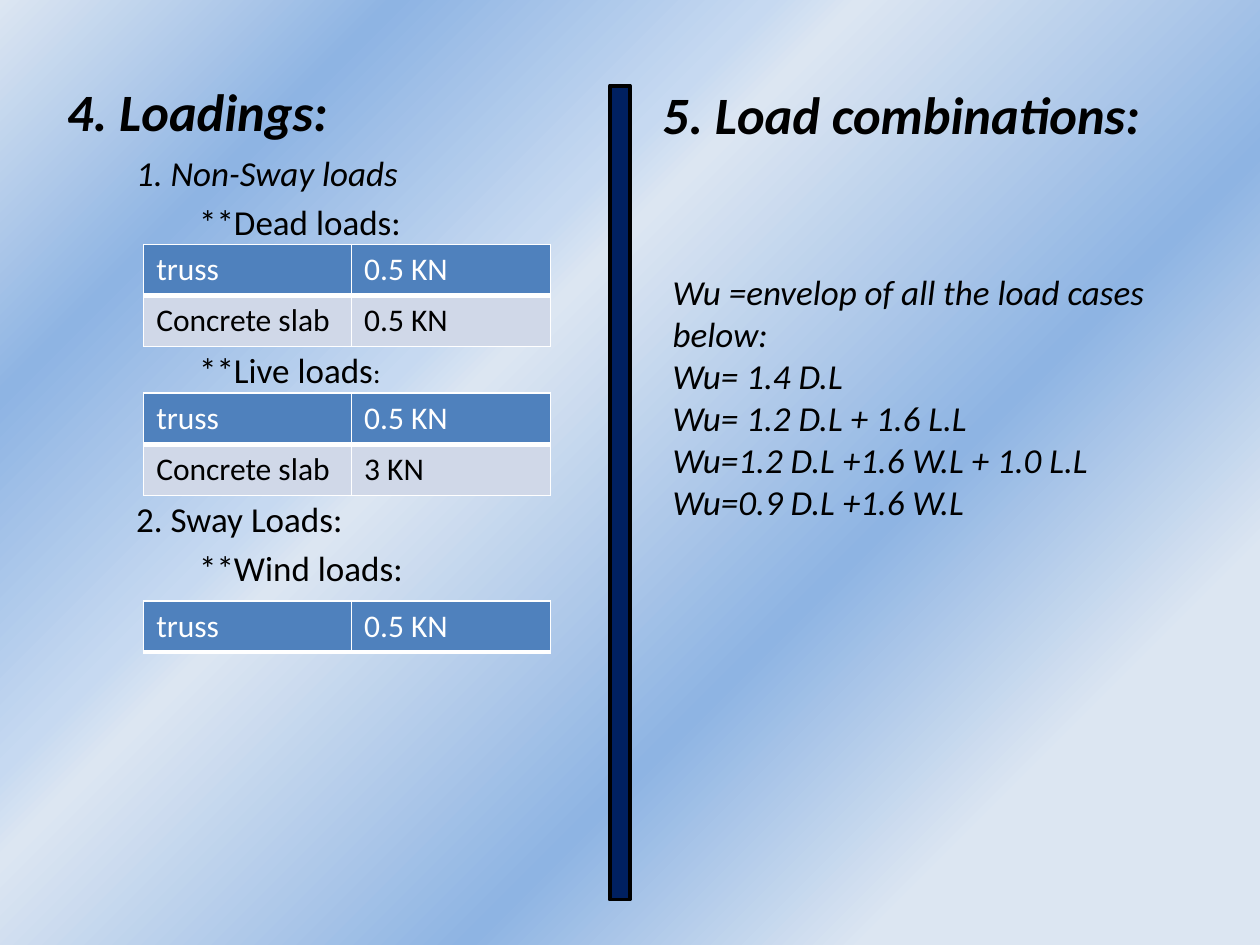
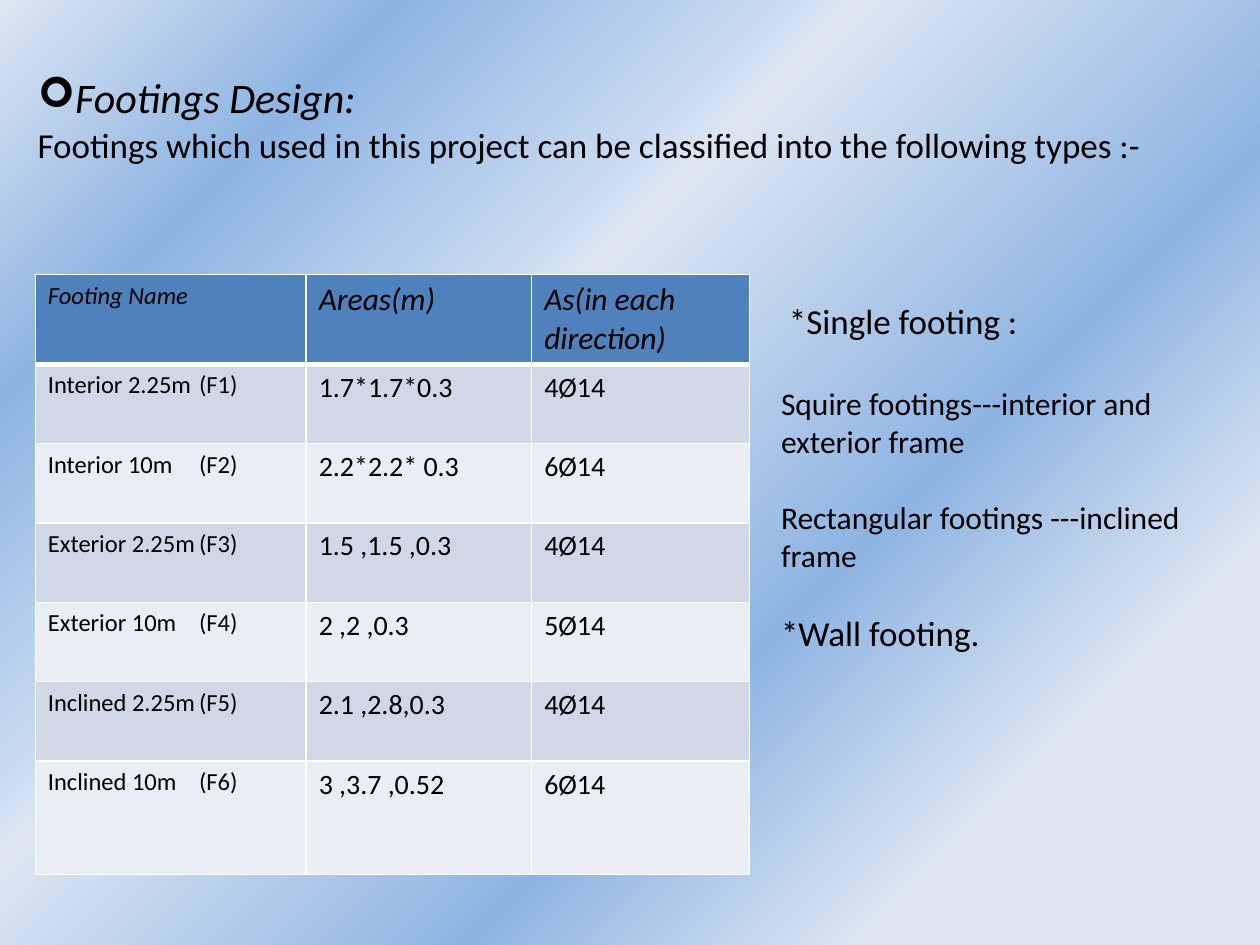
from lxml import etree
from pptx import Presentation
from pptx import util as u
from pptx.dml import color
from pptx.enum import shapes, text
from pptx.oxml import ns

FONT = "Calibri"
COLORS = {
    "black": "000000",
    "white": "FFFFFF",
    "navy": "002060",
    "header": "4F81BD",
    "band_dark": "D0D8E8",
    "band_light": "E9EDF4",
    "sky_pale": "DCE6F2",
    "sky_mid": "C6D9F1",
    "sky_deep": "8EB4E3",
}
BACKGROUND_STOPS = [
    (0, "sky_pale"), (18, "sky_deep"), (35, "sky_mid"),
    (39, "sky_pale"), (64, "sky_deep"), (82, "sky_pale"),
]


def rgb(name):
    return color.RGBColor.from_string(COLORS[name])


def add_xml(parent, tag, **attributes):
    return etree.SubElement(parent, ns.qn(tag), attributes)


def add_color(parent, name):
    add_xml(parent, "a:srgbClr", val=COLORS[name])


def set_background(master):
    master.background.fill.solid()
    solid = master.element.find(".//" + ns.qn("p:bgPr")).find(ns.qn("a:solidFill"))
    gradient = etree.Element(ns.qn("a:gradFill"), rotWithShape="1")
    stops = add_xml(gradient, "a:gsLst")
    for percent, name in BACKGROUND_STOPS:
        add_color(add_xml(stops, "a:gs", pos=str(percent * 1000)), name)
    add_xml(gradient, "a:lin", ang=str(45 * 60000), scaled="0")
    solid.getparent().replace(solid, gradient)


def place(shape, box):
    shape.left, shape.top, shape.width, shape.height = map(u.Inches, box)


def add_run(paragraph, words, size, name="black", bold=False, italic=False):
    run = paragraph.add_run()
    run.text = words
    font = run.font
    font.name, font.size, font.bold, font.italic = FONT, u.Pt(size), bold, italic
    font.color.rgb = rgb(name)


def next_paragraph(frame, first, before=0, level=0):
    paragraph = frame.paragraphs[0] if first else frame.add_paragraph()
    paragraph.alignment = text.PP_ALIGN.LEFT
    paragraph.space_before = u.Pt(before)
    paragraph.level = level
    return paragraph


def prepare_frame(shape, anchor=text.MSO_ANCHOR.TOP):
    frame = shape.text_frame
    frame.word_wrap = True
    frame.auto_size = text.MSO_AUTO_SIZE.NONE
    frame.vertical_anchor = anchor
    return frame


def fill_title(slide, box, words, size, anchor, bold=False):
    title = slide.shapes.title
    place(title, box)
    paragraph = next_paragraph(prepare_frame(title, anchor), True)
    add_run(paragraph, words, size, bold=bold, italic=True)
    return paragraph


def add_text(slide, box, lines, **style):
    frame = prepare_frame(slide.shapes.add_textbox(*map(u.Inches, box)))
    for index, (words, size, before) in enumerate(lines):
        add_run(next_paragraph(frame, index == 0, before), words, size, **style)


def set_borders(cell, row):
    properties = cell._tc.get_or_add_tcPr()
    widths = {"L": 1, "R": 1, "T": 3 if row == 1 else 1, "B": 3 if row == 0 else 1}
    for side, points in widths.items():
        line = add_xml(properties, "a:ln" + side, w=str(u.Pt(points)))
        add_color(add_xml(line, "a:solidFill"), "white")


def add_table(slide, left, top, columns, heights, rows, header_style, header_sizes, body_sizes):
    table = slide.shapes.add_table(
        len(rows), len(columns), u.Inches(left), u.Inches(top),
        u.Inches(sum(columns)), u.Inches(sum(heights))).table
    for column, width in zip(table.columns, columns):
        column.width = u.Inches(width)
    for r, (values, height) in enumerate(zip(rows, heights)):
        table.rows[r].height = u.Inches(height)
        fill = "header" if r == 0 else ("band_dark" if r % 2 else "band_light")
        sizes = body_sizes if r else header_sizes
        style = {} if r else header_style
        for c, value in enumerate(values):
            cell = table.cell(r, c)
            set_borders(cell, r)
            cell.fill.solid()
            cell.fill.fore_color.rgb = rgb(fill)
            add_run(cell.text_frame.paragraphs[0], value, sizes[c], **style)
    return table


def add_load_table(slide, top, rows):
    add_table(slide, 1.14, top, [1.65, 1.58], [0.4] * len(rows), rows,
              {"name": "white"}, [18, 18], [18, 18])


def add_divider(slide):
    divider = slide.shapes.add_shape(
        shapes.MSO_SHAPE.RECTANGLE, *map(u.Inches, (4.84, 0.68, 0.16, 6.46)))
    divider.shadow.inherit = False
    divider.fill.solid()
    divider.fill.fore_color.rgb = rgb("navy")
    divider.line.color.rgb = rgb("black")
    divider.line.width = u.Pt(2.25)


def build_loads_slide(presentation):
    slide = presentation.slides.add_slide(presentation.slide_layouts[0])
    fill_title(slide, (0.43, 0.44, 3.78, 0.87), "4. Loadings:", 30,
               text.MSO_ANCHOR.MIDDLE, bold=True)

    body = slide.placeholders[1]
    place(body, (0.98, 1.15, 4.02, 4.49))
    frame = prepare_frame(body)
    line_gap, table_gap = 4, 60.8
    outline = [
        (0, line_gap, True, [("1. Non-Sway loads", 20)]),
        (1, line_gap, False, [("**Dead loads:", 20)]),
        (1, table_gap, False, [("**Live loads", 20), (":", 16)]),
        (0, table_gap, False, [("2. Sway Loads:", 20)]),
        (1, line_gap, False, [("**Wind loads:", 20)]),
    ]
    for index, (level, before, italic, runs) in enumerate(outline):
        paragraph = next_paragraph(frame, index == 0, before, level)
        for words, size in runs:
            add_run(paragraph, words, size, italic=italic)

    truss = ("truss", "0.5 KN")
    add_load_table(slide, 1.94, [truss, ("Concrete slab", "0.5 KN")])
    add_load_table(slide, 3.12, [truss, ("Concrete slab", "3 KN")])
    add_load_table(slide, 4.77, [truss])

    add_text(slide, (5.16, 0.6, 4.33, 1.11), [("5. Load combinations:", 30, 0)],
             bold=True, italic=True)
    combinations = [
        "Wu =envelop of all the load cases below:",
        "Wu= 1.4 D.L",
        "Wu= 1.2 D.L + 1.6 L.L",
        "Wu=1.2 D.L +1.6 W.L + 1.0 L.L",
        "Wu=0.9 D.L +1.6 W.L",
    ]
    add_text(slide, (5.24, 2.1, 4.41, 2.42),
             [(words, 20, 0) for words in combinations], italic=True)
    add_divider(slide)


def build_footings_slide(presentation):
    slide = presentation.slides.add_slide(presentation.slide_layouts[5])
    heading = fill_title(slide, (0.2, 0.52, 8.98, 0.5), "Footings Design:", 24,
                         text.MSO_ANCHOR.TOP)
    properties = heading._p.get_or_add_pPr()
    properties.set("marL", "0")
    properties.set("indent", "0")
    add_xml(properties, "a:buFont", typeface="Wingdings")
    add_xml(properties, "a:buChar", char="➢")
    add_text(slide, (0.2, 0.93, 8.98, 0.5), [
        ("Footings which used in this project can be classified into the following types :-", 20, 0)])

    rows = [
        ("Footing Name", "Areas(m)", "As(in each direction)"),
        ("Interior 2.25m\t(F1)", "1.7*1.7*0.3", "4Ø14"),
        ("Interior 10m\t(F2)", "2.2*2.2* 0.3", "6Ø14"),
        ("Exterior 2.25m\t(F3)", "1.5 ,1.5 ,0.3", "4Ø14"),
        ("Exterior 10m\t(F4)", "2 ,2 ,0.3", "5Ø14"),
        ("Inclined 2.25m\t(F5)", "2.1 ,2.8,0.3", "4Ø14"),
        ("Inclined 10m\t(F6)", "3 ,3.7 ,0.52", "6Ø14"),
    ]
    heights = [0.7] + [0.63] * 5 + [0.9]
    table = add_table(slide, 0.28, 2.18, [2.15, 1.79, 1.73], heights, rows,
                      {"italic": True}, [14, 18, 18], [14, 16, 16])
    for r in range(1, len(rows)):
        paragraph = table.cell(r, 0).text_frame.paragraphs[0]
        tabs = add_xml(paragraph._p.get_or_add_pPr(), "a:tabLst")
        add_xml(tabs, "a:tab", pos=str(u.Inches(1.2)), algn="l")

    add_text(slide, (6.1, 2.33, 3.58, 2.93), [
        (" *Single footing :", 20, 0),
        ("Squire footings---interior and exterior frame", 18, 24),
        ("Rectangular footings ---inclined", 18, 22),
        ("frame", 18, 0),
        ("*Wall footing.", 20, 22),
    ])


def main():
    presentation = Presentation()
    presentation.slide_width = u.Inches(10)
    presentation.slide_height = u.Inches(7.5)
    set_background(presentation.slide_master)
    build_loads_slide(presentation)
    build_footings_slide(presentation)
    presentation.save("out.pptx")


if __name__ == "__main__":
    main()
